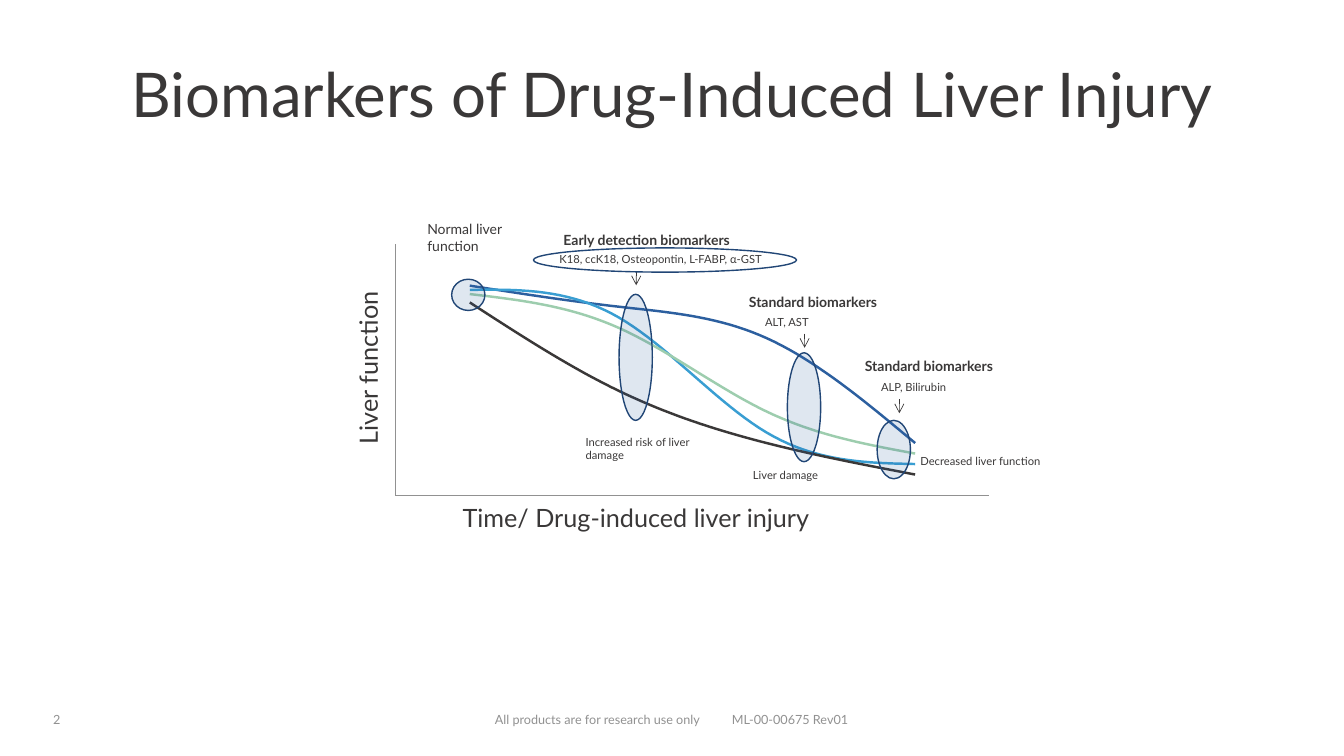
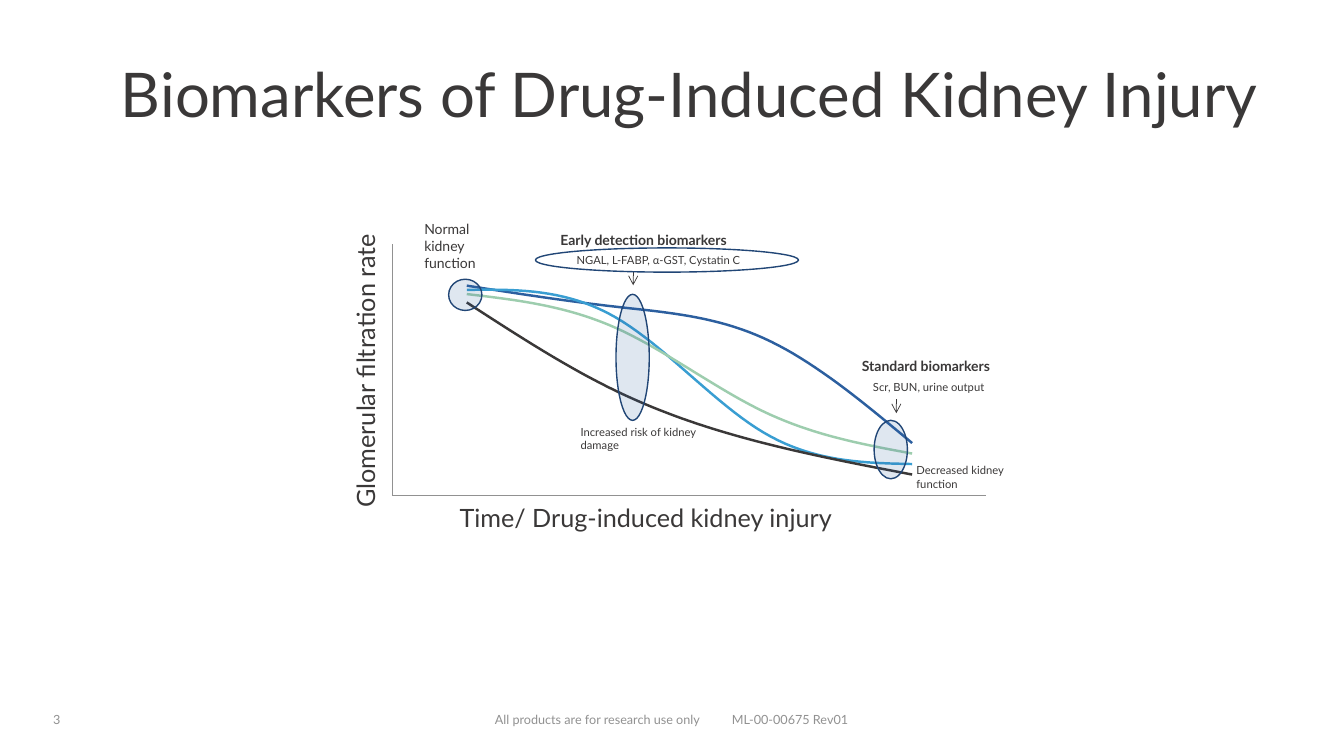
"""Build two slides on early and standard biomarkers of drug-induced organ injury."""
from lxml.etree import SubElement
from pptx import Presentation
from pptx.chart.data import CategoryChartData
from pptx.dml.color import RGBColor
from pptx.enum.chart import XL_CHART_TYPE, XL_MARKER_STYLE, XL_TICK_LABEL_POSITION, XL_TICK_MARK
from pptx.enum.shapes import MSO_CONNECTOR, MSO_SHAPE
from pptx.enum.text import MSO_ANCHOR, MSO_AUTO_SIZE, PP_ALIGN
from pptx.oxml import parse_xml
from pptx.oxml.ns import nsdecls, qn
from pptx.util import Inches, Pt

FONT = "Lato"
COLORS = {"text": "3A3838", "footer": "919191", "axis": "919191",
          "blue": "2C5F9F", "sky": "399ED2", "green": "9DCDAE", "outline": "214676"}

CURVES = [("Series 1", (100, 90, 75, 25), "blue"),
          ("Series 2", (98, 85, 30, 15), "sky"),
          ("Series 3", (96, 80, 40, 20), "green"),
          ("Series 4", (92, 50, 25, 10), "text")]
CHART_BOX = (3.37, 2.25, 6.67, 3)
PLOT_AREA = {"x": 0.083, "y": 0.056, "w": 0.883, "h": 0.833}
Y_TITLE_CENTER = 3.65
STAGE_WIDTH = 0.33
ARROW_LENGTH = 0.14

NORMAL, EARLY, LATE = (4.48, 2.77, 0.31), (6.14, 2.92, 1.25), (8.7, 4.17, 0.58)
DAMAGE = (7.81, 3.5, 1.08)
EARLY_ARROW, DAMAGE_ARROW, LATE_ARROW = (6.31, 2.69), (7.98, 3.31), (8.92, 3.96)
HEADINGS = {"early": ("Early detection biomarkers", 5.49, 2.25, 3.22),
            "damage": ("Standard biomarkers", 7.33, 2.86, 2.15),
            "late": ("Standard biomarkers", 8.48, 3.5, 2.22)}

SLIDES = [
    {"number": 2, "title": "Biomarkers of Drug-Induced Liver Injury", "title_left": 0.67,
     "shift": 0, "oval_left": 5.29,
     "x_title": ("Time/ Drug-induced liver injury", 3.65),
     "y_title": ("Liver function", 1.73),
     "start": ("Normal liver function", 0.44),
     "stages": [NORMAL, EARLY, DAMAGE, LATE],
     "arrows": [EARLY_ARROW, DAMAGE_ARROW, LATE_ARROW],
     "headings": ["early", "damage", "late"],
     "notes": [("K18, ccK18, Osteopontin, L-FABP, α-GST", 5.45, 2.45, 3.06, 0.24),
               ("ALT, AST", 7.49, 3.08, 1.05, 0.24),
               ("ALP, Bilirubin", 8.64, 3.72, 1.44, 0.24),
               ("Increased risk of liver damage", 5.71, 4.27, 1.46, 0.37),
               ("Liver damage", 7.37, 4.6, 1.46, 0.24),
               ("Decreased liver function", 9.03, 4.46, 1.46, 0.24)]},
    {"number": 3, "title": "Biomarkers of Drug-Induced Kidney Injury", "title_left": 0.84,
     "shift": -0.03, "oval_left": 5.31,
     "x_title": ("Time/ Drug-induced kidney injury", 3.9),
     "y_title": ("Glomerular filtration rate", 2.99),
     "start": ("Normal kidney function", 0.61),
     "stages": [NORMAL, EARLY, LATE],
     "arrows": [EARLY_ARROW, LATE_ARROW],
     "headings": ["early", "late"],
     "notes": [("NGAL, L-FABP, α-GST, Cystatin C", 5.65, 2.46, 2.89, 0.24),
               ("Scr, BUN, urine output", 8.59, 3.72, 1.69, 0.24),
               ("Increased risk of kidney damage", 5.69, 4.17, 1.46, 0.37),
               ("Decreased kidney function", 9.02, 4.55, 1.46, 0.37)]},
]
FOOTER = "All products are for research use only\tML-00-00675 Rev01"
FOOTER_TAB = 2.35


def rgb(name):
    return RGBColor.from_string(COLORS[name])


def add_text(s, text, box, size, color="text", bold=False, align=PP_ALIGN.LEFT,
             anchor=MSO_ANCHOR.TOP, wrap=True, grow=True, tab=None):
    tb = s.shapes.add_textbox(*map(Inches, box))
    tf = tb.text_frame
    tf.word_wrap = wrap
    tf.auto_size = MSO_AUTO_SIZE.SHAPE_TO_FIT_TEXT if grow else MSO_AUTO_SIZE.NONE
    tf.vertical_anchor = anchor
    p = tf.paragraphs[0]
    p.text = text
    p.alignment = align
    if tab:
        tabs = SubElement(p._p.get_or_add_pPr(), qn("a:tabLst"))
        SubElement(tabs, qn("a:tab"), pos=str(Inches(tab)), algn="l")
    p.font.name = FONT
    p.font.size = Pt(size)
    p.font.bold = bold
    p.font.color.rgb = rgb(color)
    return tb


def add_oval(s, box, filled):
    sp = s.shapes.add_shape(MSO_SHAPE.OVAL, *map(Inches, box))
    sp.shadow.inherit = False
    sp.line.color.rgb = rgb("outline")
    sp.line.width = Pt(1)
    if filled:
        sp.fill.solid()
        sp.fill.fore_color.rgb = rgb("blue")
        color = sp._element.spPr.find(qn("a:solidFill")).find(qn("a:srgbClr"))
        SubElement(color, qn("a:alpha"), val="15000")
    else:
        sp.fill.background()


def add_arrow(s, x, y):
    line = s.shapes.add_connector(MSO_CONNECTOR.STRAIGHT, Inches(x), Inches(y),
                                  Inches(x), Inches(y + ARROW_LENGTH))
    line.line.color.rgb = rgb("text")
    line.line.width = Pt(0.5)
    SubElement(line.line._get_or_add_ln(), qn("a:tailEnd"), type="arrow")
    SubElement(line._element.spPr, qn("a:effectLst"))


def add_curves(s, box):
    data = CategoryChartData()
    data.categories = ["1", "2", "3", "4"]
    for name, values, _ in CURVES:
        data.add_series(name, values)
    chart = s.shapes.add_chart(XL_CHART_TYPE.LINE, *map(Inches, box), data).chart
    chart.has_title = chart.has_legend = False
    chart.font.name = FONT
    chart.font.size = Pt(10)
    chart.font.color.rgb = rgb("text")
    chart.plots[0].vary_by_categories = False
    for series, (_, _, color) in zip(chart.plots[0].series, CURVES):
        series.smooth = True
        series.marker.style = XL_MARKER_STYLE.NONE
        series.format.line.color.rgb = rgb(color)
        series.format.line.width = Pt(1.75)
    for axis in (chart.category_axis, chart.value_axis):
        axis.has_major_gridlines = False
        axis.major_tick_mark = axis.minor_tick_mark = XL_TICK_MARK.NONE
        axis.tick_label_position = XL_TICK_LABEL_POSITION.NONE
        axis.format.line.color.rgb = rgb("axis")
        axis.format.line.width = Pt(0.75)
    chart.value_axis.minimum_scale = 0
    chart.value_axis.maximum_scale = 120
    sizes = "".join(f'<c:{key} val="{value}"/>' for key, value in PLOT_AREA.items())
    area = chart._chartSpace.chart.plotArea
    for old in area.findall(qn("c:layout")):
        area.remove(old)
    area.insert(0, parse_xml(
        f'<c:layout {nsdecls("c")}><c:manualLayout><c:layoutTarget val="inner"/>'
        f'<c:xMode val="edge"/><c:yMode val="edge"/>{sizes}</c:manualLayout></c:layout>'))


def add_frame(s, content):
    add_text(s, content["title"], (content["title_left"], 0.3, 12, 1.25), 44,
             align=PP_ALIGN.CENTER, anchor=MSO_ANCHOR.MIDDLE, grow=False)
    for text, left, width, tab in ((FOOTER, 4.81, 4.11, FOOTER_TAB),
                                   (str(content["number"]), 0.43, 3, None)):
        add_text(s, text, (left, 6.94, width, 0.4), 9, "footer",
                 anchor=MSO_ANCHOR.MIDDLE, grow=False, tab=tab)


def add_diagram(s, content):
    dx = content["shift"]
    left, *rest = CHART_BOX
    add_curves(s, (left + dx, *rest))
    for x, y, height in content["stages"]:
        add_oval(s, (x + dx, y, STAGE_WIDTH, height), True)
    text, width = content["x_title"]
    add_text(s, text, (4.49 + dx, 4.93, width, 0.4), 18, wrap=False)
    text, width = content["y_title"]
    tb = add_text(s, text, (Y_TITLE_CENTER + dx - width / 2, 3.44, width, 0.4), 18, wrap=False)
    tb.rotation = 270
    text, height = content["start"]
    add_text(s, text, (4.14 + dx, 2.14, 1, height), 10)
    for key in content["headings"]:
        text, x, y, width = HEADINGS[key]
        add_text(s, text, (x + dx, y, width, 0.27), 10, bold=True)
    for text, x, y, width, height in content["notes"]:
        add_text(s, text, (x + dx, y, width, height), 8)
    for x, y in content["arrows"]:
        add_arrow(s, x + dx, y)
    add_oval(s, (content["oval_left"], 2.46, 2.61, 0.24), False)


def main():
    prs = Presentation()
    prs.slide_width = Inches(13.33)
    prs.slide_height = Inches(7.5)
    for content in SLIDES:
        s = prs.slides.add_slide(prs.slide_layouts[6])
        add_diagram(s, content)
        add_frame(s, content)
    prs.save("out.pptx")


if __name__ == "__main__":
    main()
